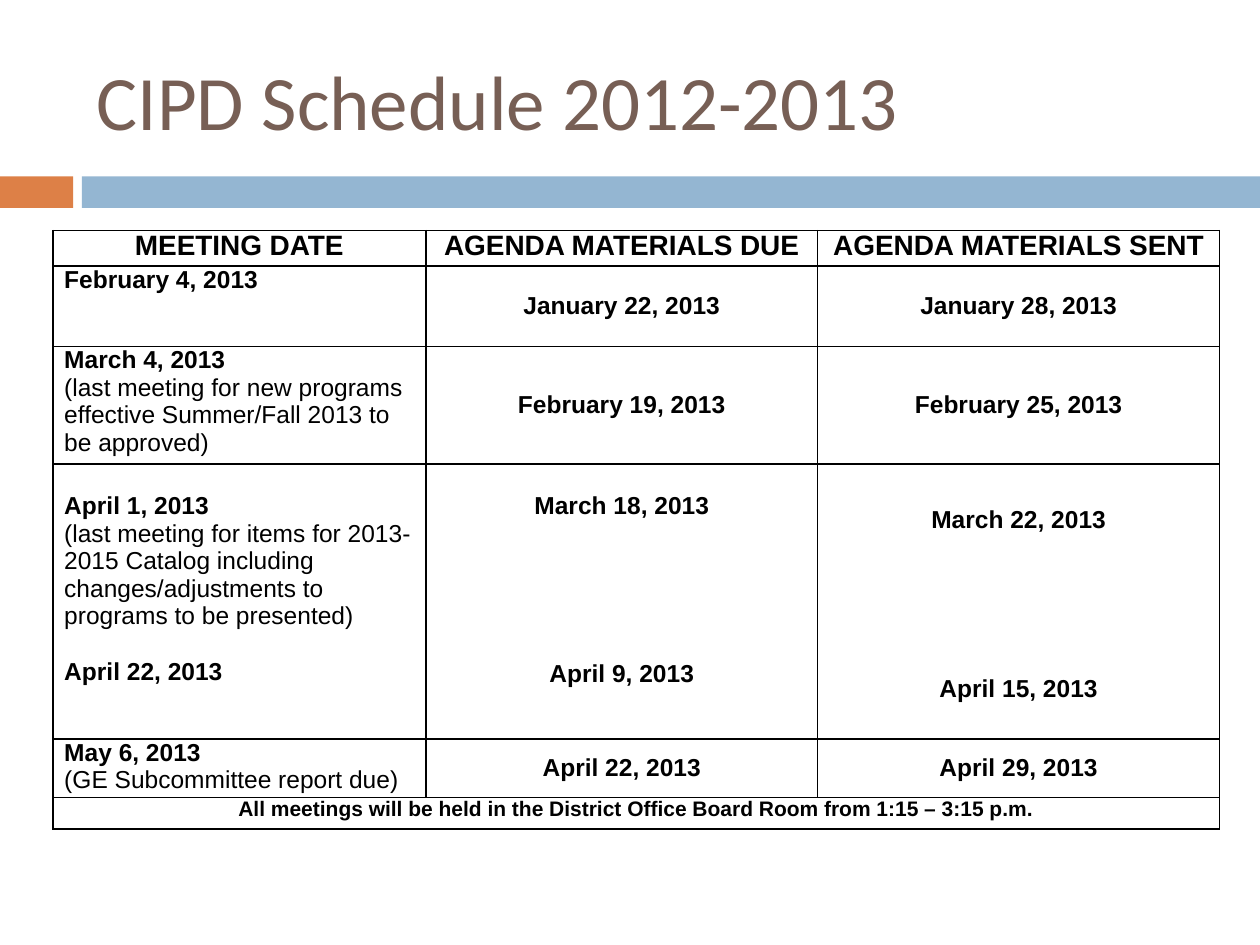
from lxml import etree
from pptx import Presentation, util as u
from pptx.dml.color import RGBColor
from pptx.enum import shapes, text
from pptx.oxml.ns import qn

ORANGE = RGBColor(0xDD, 0x80, 0x47)
BLUE = RGBColor(0x94, 0xB6, 0xD2)
BROWN = RGBColor(0x77, 0x5F, 0x55)
BLACK = RGBColor(0, 0, 0)

COLUMNS = [2.96, 3.11, 3.19]
ROWS = [0.28, 0.64, 0.87, 2.18, 0.44, 0.25]
LINE = 16.1  # height of one 14 pt line, in points
CENTER = text.PP_ALIGN.CENTER
TOP, MIDDLE = text.MSO_ANCHOR.TOP, text.MSO_ANCHOR.MIDDLE


def add_text(paragraph, words, color=BLACK, **font_values):
    run = paragraph.add_run()
    run.text = words
    run.font.color.rgb = color
    for name, value in font_values.items():
        setattr(run.font, name, value)


def fill_cell(cell, paragraphs, size=14, align=None, anchor=TOP, top=0, gap=0):
    """Write the paragraphs; dates are bold, notes in brackets are not.

    top is the inset above the text, gap the space before each later date.
    """
    cell.vertical_anchor = anchor
    cell.margin_top, cell.margin_bottom = u.Pt(top), 0
    cell.margin_left = cell.margin_right = u.Inches(0.09)
    for index, words in enumerate(paragraphs):
        frame = cell.text_frame
        paragraph = frame.add_paragraph() if index else frame.paragraphs[0]
        is_note = words.startswith("(")
        paragraph.alignment = align
        if index and not is_note:
            paragraph.space_before = u.Pt(gap)
        add_text(paragraph, words, name="Arial", size=u.Pt(size), bold=not is_note)


presentation = Presentation()
presentation.slide_width, presentation.slide_height = u.Inches(10), u.Inches(7.5)
slide = presentation.slides.add_slide(presentation.slide_layouts[6])

# Band under the title
for left, width, color in [(0, 0.58, ORANGE), (0.65, 9.35, BLUE)]:
    bar = slide.shapes.add_shape(
        shapes.MSO_SHAPE.RECTANGLE,
        u.Inches(left), u.Inches(1.4), u.Inches(width), u.Inches(0.25))
    bar.shadow.inherit = False
    bar.fill.solid()
    bar.fill.fore_color.rgb = color
    bar.line.fill.background()

# Title
title = slide.shapes.add_textbox(
    u.Inches(0.67), u.Inches(0.25), u.Inches(8.92), u.Inches(1.08)).text_frame
title.word_wrap = True
title.vertical_anchor = MIDDLE
add_text(title.paragraphs[0], "CIPD Schedule 2012-2013", BROWN,
         name="Calibri", size=u.Pt(44))

# Schedule table
table = slide.shapes.add_table(
    len(ROWS), len(COLUMNS), u.Inches(0.42), u.Inches(1.83),
    u.Inches(sum(COLUMNS)), u.Inches(sum(ROWS))).table
table.first_row = table.horz_banding = False
for column, width in zip(table.columns, COLUMNS):
    column.width = u.Inches(width)
for row, height in zip(table.rows, ROWS):
    row.height = u.Inches(height)

for cell in table.iter_cells():
    properties = cell._tc.get_or_add_tcPr()
    for side in ("a:lnL", "a:lnR", "a:lnT", "a:lnB"):
        border = etree.SubElement(properties, qn(side), w=str(u.Pt(1)))
        solid = etree.SubElement(border, qn("a:solidFill"))
        etree.SubElement(solid, qn("a:srgbClr"), val=str(BLACK))
    cell.fill.background()

for column, heading in enumerate(
        ["MEETING DATE", "AGENDA MATERIALS DUE", "AGENDA MATERIALS SENT"]):
    fill_cell(table.cell(0, column), [heading], size=16, align=CENTER)

meetings = {
    1: (["February 4, 2013"], "January 22, 2013", "January 28, 2013"),
    2: (["March 4, 2013",
         "(last meeting for new programs effective Summer/Fall 2013 to be approved)"],
        "February 19, 2013", "February 25, 2013"),
    4: (["May 6, 2013", "(GE Subcommittee report due)"],
        "April 22, 2013", "April 29, 2013"),
}
for row, (meeting, due, sent) in meetings.items():
    fill_cell(table.cell(row, 0), meeting)
    for column, date in enumerate([due, sent], start=1):
        fill_cell(table.cell(row, column), [date], align=CENTER, anchor=MIDDLE)

# April holds two meetings in one row, set apart by whole lines
april_meetings = [
    "April 1, 2013",
    "(last meeting for items for 2013-2015 Catalog including "
    "changes/adjustments to programs to be presented)",
    "April 22, 2013",
]
fill_cell(table.cell(3, 0), april_meetings, top=LINE, gap=LINE)
fill_cell(table.cell(3, 1), ["March 18, 2013", "April 9, 2013"],
          align=CENTER, top=LINE, gap=5 * LINE)
fill_cell(table.cell(3, 2), ["March 22, 2013", "April 15, 2013"],
          align=CENTER, top=1.5 * LINE, gap=5 * LINE)

footer = table.cell(5, 0)
footer.merge(table.cell(5, 2))
fill_cell(footer, ["All meetings will be held in the District Office Board Room "
                   "from 1:15 – 3:15 p.m."], size=12, align=CENTER)

presentation.save("out.pptx")
